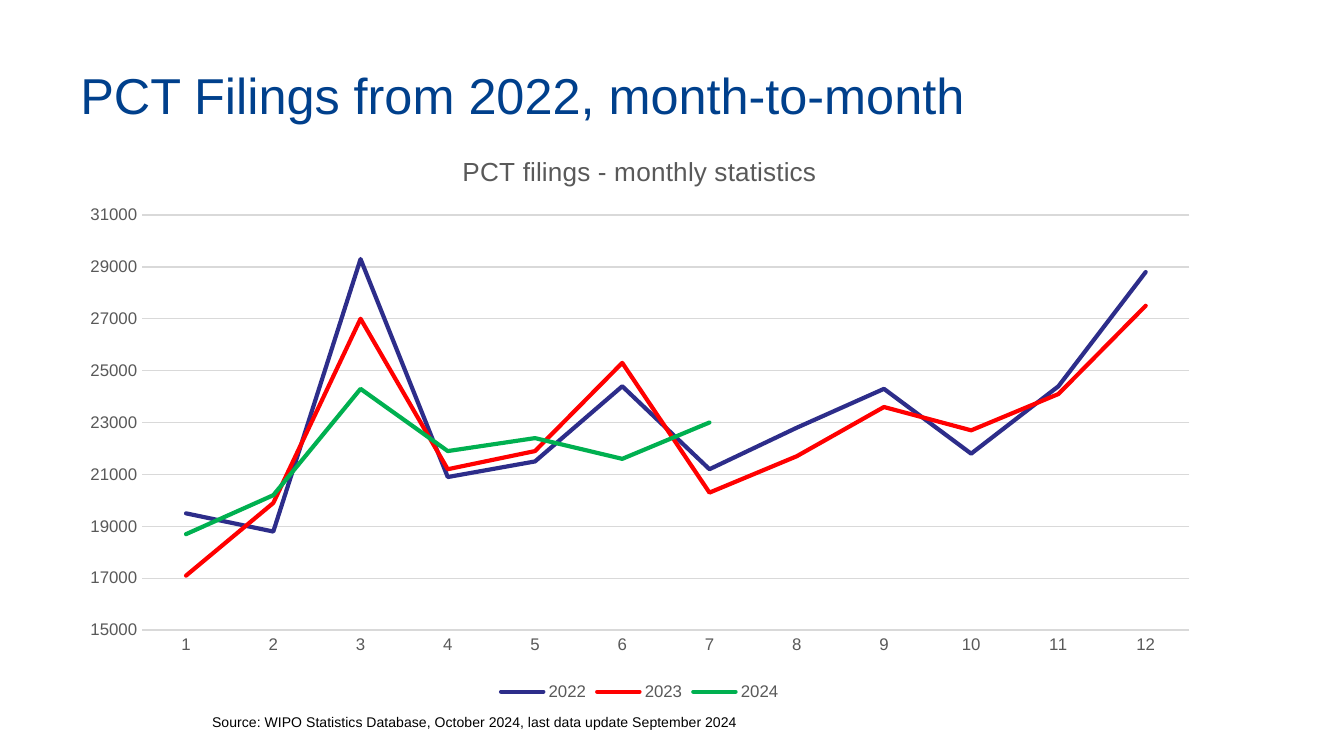
from dataclasses import dataclass

from lxml import etree
from pptx import Presentation
from pptx.chart.data import CategoryChartData
from pptx.dml.color import RGBColor
from pptx.enum.chart import XL_CHART_TYPE, XL_LEGEND_POSITION, XL_MARKER_STYLE, XL_TICK_MARK
from pptx.enum.text import MSO_ANCHOR
from pptx.oxml.ns import qn
from pptx.util import Inches, Pt

LINE_CHART = XL_CHART_TYPE.LINE
LEGEND_BOTTOM = XL_LEGEND_POSITION.BOTTOM
NO_MARKER = XL_MARKER_STYLE.NONE
NO_TICK = XL_TICK_MARK.NONE
TOP, MIDDLE = MSO_ANCHOR.TOP, MSO_ANCHOR.MIDDLE

MONTHS = [str(month) for month in range(1, 13)]
FILINGS = {
    "2022": [19500, 18800, 29300, 20900, 21500, 24400, 21200, 22800, 24300, 21800, 24400, 28800],
    "2023": [17100, 19900, 27000, 21200, 21900, 25300, 20300, 21700, 23600, 22700, 24100, 27500],
    "2024": [18700, 20200, 24300, 21900, 22400, 21600, 23000] + [None] * 5,
}
CHART_BOX = (0.5, 0.98, 8.52, 4.28)
PLOT_BOX = (0.56, 0.62, 7.79, 3.09)


@dataclass(frozen=True)
class Theme:
    font: str = "Arial"
    title: str = "00408C"
    text: str = "000000"
    label: str = "595959"
    grid: str = "D9D9D9"
    series: tuple = ("2D2D8A", "FF0000", "00B050")
    title_size: float = 27
    chart_title_size: float = 14
    label_size: float = 9
    source_size: float = 7.5
    grid_width: float = 0.75
    series_width: float = 2.25


class SlideBuilder:
    """Adds styled text and line charts to one slide."""

    def __init__(self, slide, theme):
        self.slide = slide
        self.theme = theme

    def style_font(self, font, size, color):
        font.name = self.theme.font
        font.size = Pt(size)
        font.bold = False
        font.color.rgb = RGBColor.from_string(color)

    def style_line(self, line, width, color):
        line.width = Pt(width)
        line.color.rgb = RGBColor.from_string(color)

    def add_text(self, box, text, size, color, anchor=TOP):
        shape = self.slide.shapes.add_textbox(*map(Inches, box))
        frame = shape.text_frame
        frame.word_wrap = True
        frame.vertical_anchor = anchor
        run = frame.paragraphs[0].add_run()
        run.text = text
        self.style_font(run.font, size, color)

    def place_plot(self, chart, chart_box, plot_box):
        plot_area = chart.plots[0]._element.getparent()
        layout = plot_area.find(qn("c:layout"))
        if layout is None:
            layout = etree.Element(qn("c:layout"))
            plot_area.insert(0, layout)
        manual = etree.SubElement(layout, qn("c:manualLayout"))
        settings = {"layoutTarget": "inner", "xMode": "edge", "yMode": "edge"}
        for name, length, total in zip("xywh", plot_box, chart_box[2:] * 2):
            settings[name] = length / total
        for name, value in settings.items():
            etree.SubElement(manual, qn(f"c:{name}")).set("val", str(value))

    def add_line_chart(self, box, plot_box, title, categories, series_values, minimum, maximum, step):
        theme = self.theme
        data = CategoryChartData()
        data.categories = categories
        for name, values in series_values.items():
            data.add_series(name, values)
        chart = self.slide.shapes.add_chart(LINE_CHART, *map(Inches, box), data).chart
        self.style_font(chart.font, theme.label_size, theme.label)

        chart.has_title = True
        run = chart.chart_title.text_frame.paragraphs[0].add_run()
        run.text = title
        self.style_font(run.font, theme.chart_title_size, theme.label)
        chart.chart_title.include_in_layout = False

        chart.has_legend = True
        chart.legend.position = LEGEND_BOTTOM
        chart.legend.include_in_layout = False
        self.style_font(chart.legend.font, theme.label_size, theme.label)

        for axis in (chart.category_axis, chart.value_axis):
            axis.major_tick_mark = NO_TICK
            axis.minor_tick_mark = NO_TICK
            self.style_font(axis.tick_labels.font, theme.label_size, theme.label)
        self.style_line(chart.category_axis.format.line, theme.grid_width, theme.grid)

        value_axis = chart.value_axis
        value_axis.minimum_scale = minimum
        value_axis.maximum_scale = maximum
        value_axis.major_unit = step
        value_axis.format.line.fill.background()
        self.style_line(value_axis.major_gridlines.format.line, theme.grid_width, theme.grid)

        chart.plots[0].vary_by_categories = False
        for series, color in zip(chart.plots[0].series, theme.series):
            series.smooth = False
            series.marker.style = NO_MARKER
            self.style_line(series.format.line, theme.series_width, color)
            series._element.find(f"{qn('c:spPr')}/{qn('a:ln')}").set("cap", "rnd")
        self.place_plot(chart, box, plot_box)


def main():
    presentation = Presentation()
    presentation.slide_width = Inches(10)
    presentation.slide_height = presentation.slide_width * 9 // 16
    theme = Theme()
    slide = presentation.slides.add_slide(presentation.slide_layouts[6])
    builder = SlideBuilder(slide, theme)
    builder.add_text((0.5, 0.23, 9, 0.94), "PCT Filings from 2022, month-to-month",
                     theme.title_size, theme.title, MIDDLE)
    builder.add_text((1.48, 5.26, 4.23, 0.23),
                     "Source: WIPO Statistics Database, October 2024, last data update September 2024",
                     theme.source_size, theme.text)
    builder.add_line_chart(CHART_BOX, PLOT_BOX, "PCT filings - monthly statistics",
                           MONTHS, FILINGS, 15000, 31000, 2000)
    presentation.save("out.pptx")


if __name__ == "__main__":
    main()
